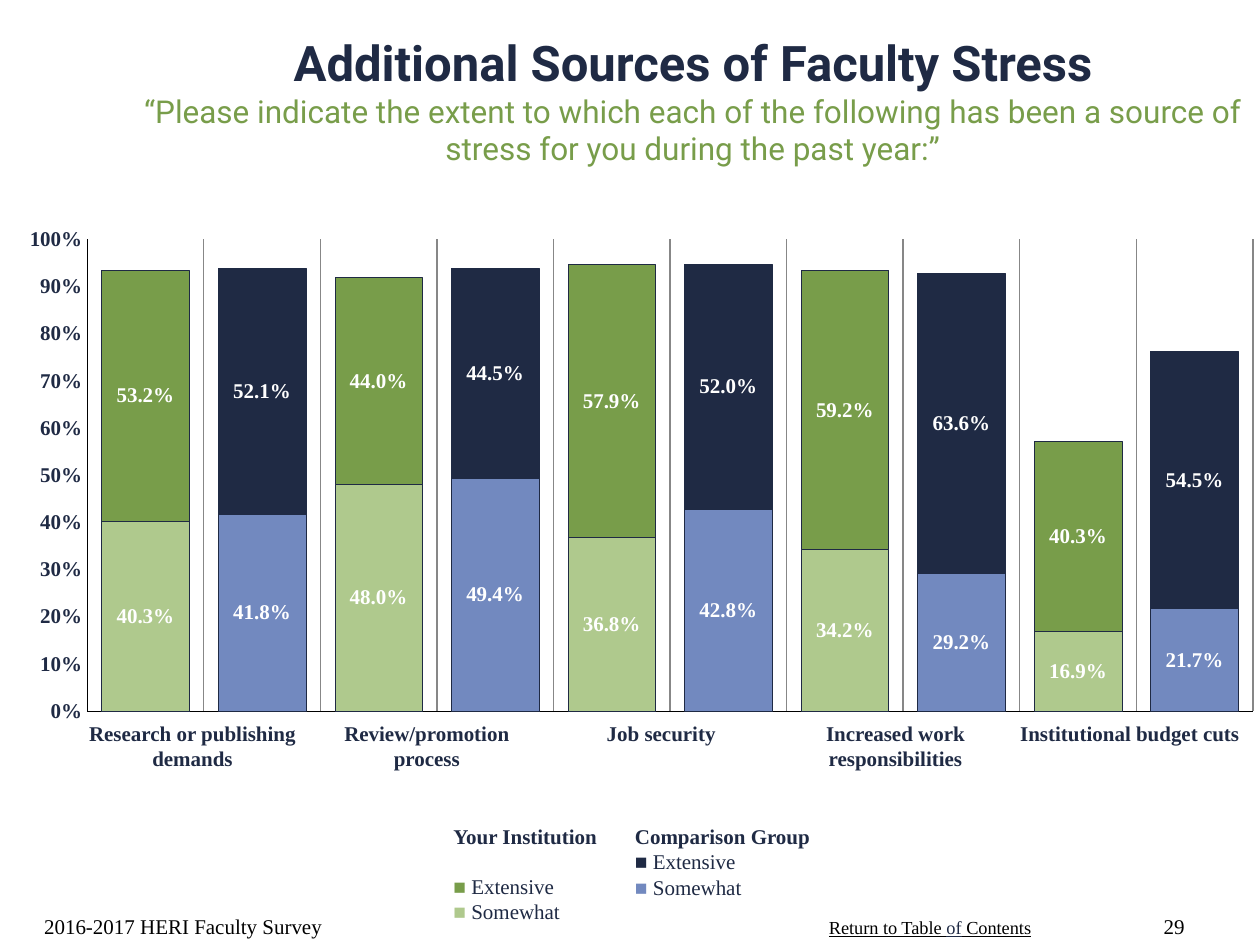
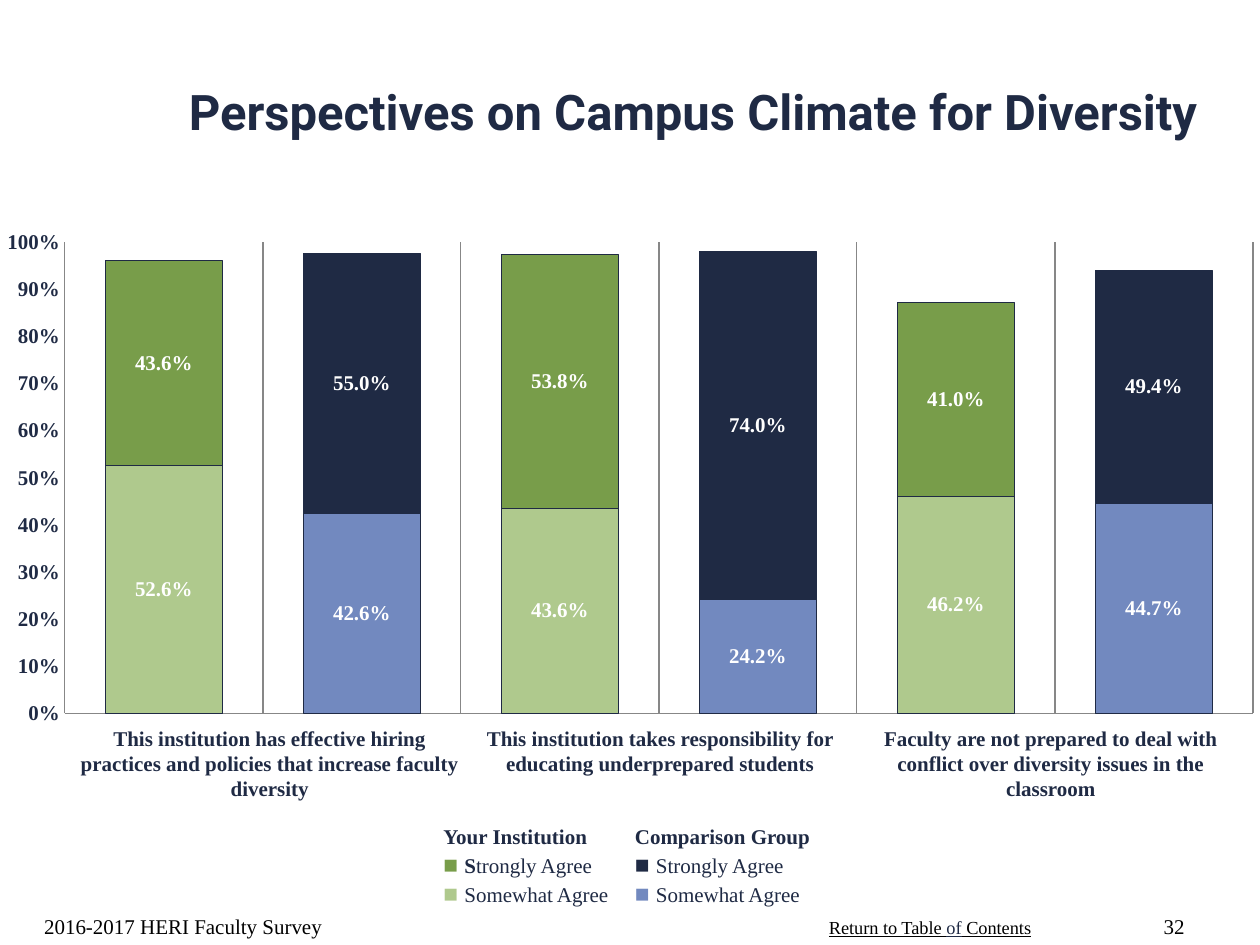
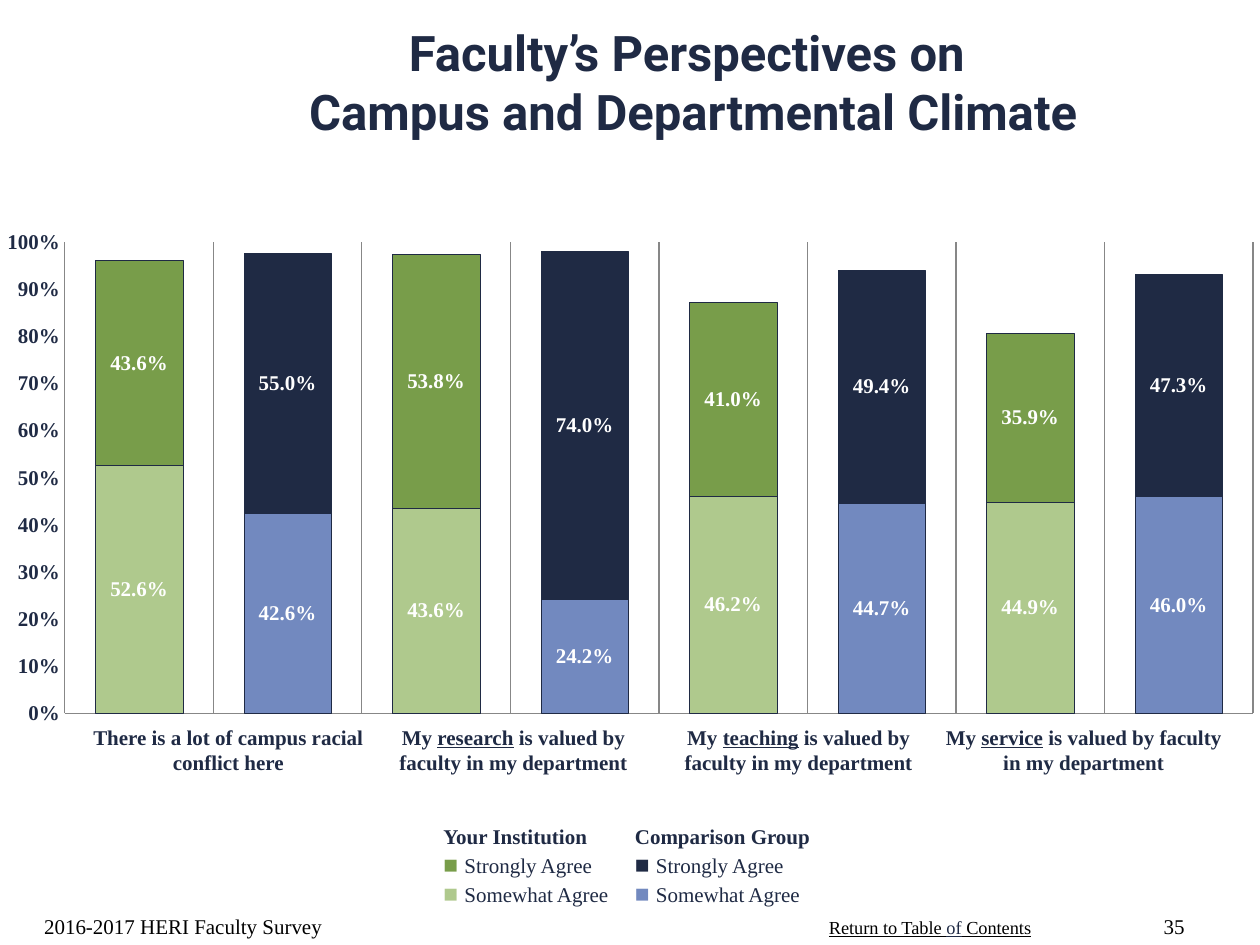
import pptx
import pptx.chart.data
import pptx.dml.color
import pptx.enum.chart
import pptx.enum.text
import pptx.util
from lxml import etree

Cm, Pt = pptx.util.Cm, pptx.util.Pt
ALIGN = pptx.enum.text.PP_ALIGN
ANCHOR = pptx.enum.text.MSO_ANCHOR

NAVY, GREEN, LIGHT_GREEN, BLUE = "1F2A44", "789D4A", "AFC98D", "7289BF"
BLACK, WHITE, GREY = "000000", "FFFFFF", "878787"
SERIF, SANS = "Times New Roman", "Roboto"


def rgb(value):
    return pptx.dml.color.RGBColor.from_string(value)


def add_text(s, box, paras, size=12, color=NAVY, font=SERIF, bold=False,
             align=ALIGN.LEFT, anchor=ANCHOR.TOP, inset=0.25):
    """Each paragraph is a list of runs: a string, or (string, font changes)."""
    tf = s.shapes.add_textbox(*map(Cm, box)).text_frame
    tf.word_wrap = True
    tf.vertical_anchor = anchor
    tf.margin_left = tf.margin_right = Cm(inset)
    for i, runs in enumerate(paras):
        p = tf.add_paragraph() if i else tf.paragraphs[0]
        p.alignment = align
        p.font.name, p.font.size, p.font.bold = font, Pt(size), bold
        p.font.color.rgb = rgb(color)
        for run in runs:
            text, changes = (run, {}) if isinstance(run, str) else run
            for j, line in enumerate(text.split("\n")):
                if j:
                    p.add_line_break()
                r = p.add_run()
                r.text = line
                for key, value in changes.items():
                    if key == "color":
                        r.font.color.rgb = rgb(value)
                    else:
                        setattr(r.font, key, value)
    return tf


UNDERLINE = {"underline": True}
AGREE = dict(left=8.94, marker=14, gap=0, top="Strongly Agree", low="Somewhat Agree")
CLIMATE_SOMEWHAT = [0.526, 0.426, 0.436, 0.242, 0.462, 0.447]
CLIMATE_STRONGLY = [0.436, 0.55, 0.538, 0.74, 0.41, 0.494]
AGREE_CHART = dict(gap=70, plot=(0.045, 0.043, 0.955, 0.936), axis=GREY, axis_width=0.75)

slides = [
    dict(
        number="29",
        title=[["Additional Sources of Faculty Stress"],
               [("“Please indicate the extent to which each of the following has been "
                 "a source of stress for you during the past year:”",
                 {"size": Pt(18), "color": GREEN, "bold": False})]],
        title_height=3.18, title_bottom=0.13,
        somewhat=[0.403, 0.418, 0.48, 0.494, 0.368, 0.428, 0.342, 0.292, 0.169, 0.217],
        extensive=[0.532, 0.521, 0.44, 0.445, 0.579, 0.52, 0.592, 0.636, 0.403, 0.545],
        chart=dict(gap=33, plot=(0.064, 0.037, 0.936, 0.936), axis=BLACK, axis_width=0.19),
        labels=[["Research or publishing demands"], ["Review/promotion process"],
                ["Job security"], ["Increased work responsibilities"],
                ["Institutional budget cuts"]],
        label_box=(1.52, 14.4, 23.62),
        legend=dict(left=9.14, marker=12, gap=14, top="Extensive", low="Somewhat"),
        own_top=["Extensive"],
    ),
    dict(
        number="32",
        title=[["Perspectives on Campus Climate for Diversity"]],
        title_height=3.61, title_bottom=0.13,
        somewhat=CLIMATE_SOMEWHAT, extensive=CLIMATE_STRONGLY, chart=AGREE_CHART,
        labels=[["This institution has effective hiring practices and policies that "
                 "increase faculty diversity"],
                ["This institution takes responsibility for educating underprepared students"],
                ["Faculty are not prepared to deal with conflict over diversity issues "
                 "in the classroom"]],
        label_box=(1.5, 14.5, 23.62),
        legend=AGREE,
        own_top=[("S", {"bold": True}), "trongly Agree"],
    ),
    dict(
        number="35",
        title=[["Faculty’s Perspectives on \nCampus and Departmental Climate"]],
        title_height=3.61, title_bottom=1.32,
        somewhat=CLIMATE_SOMEWHAT + [0.449, 0.46],
        extensive=CLIMATE_STRONGLY + [0.359, 0.473], chart=AGREE_CHART,
        labels=[["There is a lot of campus racial conflict here"]] + [
            ["My ", (work, UNDERLINE), " is valued by faculty in my department"]
            for work in ("research", "teaching", "service")],
        label_box=(1.73, 14.48, 22.99),
        legend=AGREE,
        own_top=["Strongly Agree"],
    ),
]

prs = pptx.Presentation()
prs.slide_width, prs.slide_height = Cm(25.4), Cm(19.05)

for d in slides:
    s = prs.slides.add_slide(prs.slide_layouts[6])

    # Footer
    add_text(s, (16.46, 18.34, 5.2, 0.71),
             [[("Return to Table ", UNDERLINE), ("of", {"underline": True, "color": NAVY}),
               (" Contents", UNDERLINE)]], size=10.5, color=BLACK)
    add_text(s, (22.86, 17.78, 1.27, 1.27), [[d["number"]]], color=BLACK,
             align=ALIGN.RIGHT, anchor=ANCHOR.BOTTOM)
    add_text(s, (0.64, 17.78, 8.05, 1.27), [["2016-2017 HERI Faculty Survey"]],
             color=BLACK, anchor=ANCHOR.BOTTOM)

    # Title
    tf = add_text(s, (2.54, 0.43, 22.86, d["title_height"]), d["title"], size=28,
                  font=SANS, bold=True, align=ALIGN.CENTER, anchor=ANCHOR.MIDDLE)
    tf.margin_bottom = Cm(d["title_bottom"])

    # Stacked columns, alternating institution and comparison group
    style = d["chart"]
    data = pptx.chart.data.CategoryChartData(number_format="0.0%")
    data.categories = [str(i + 1) for i in range(len(d["somewhat"]))]
    data.add_series("Series 1", d["somewhat"])
    data.add_series("Series 2", d["extensive"])
    chart = s.shapes.add_chart(pptx.enum.chart.XL_CHART_TYPE.COLUMN_STACKED,
                               Cm(0.15), Cm(4.45), Cm(25.12), Cm(10.16), data).chart
    chart.has_legend = chart.has_title = False
    chart.font.name, chart.font.size, chart.font.bold = SERIF, Pt(12), True
    chart.font.color.rgb = rgb(NAVY)

    for axis in (chart.category_axis, chart.value_axis):
        axis.major_tick_mark = axis.minor_tick_mark = pptx.enum.chart.XL_TICK_MARK.NONE
        axis.format.line.color.rgb = rgb(style["axis"])
        axis.format.line.width = Pt(style["axis_width"])
    cat, val = chart.category_axis, chart.value_axis
    cat.tick_label_position = pptx.enum.chart.XL_TICK_LABEL_POSITION.NONE
    cat.has_major_gridlines = True
    cat.major_gridlines.format.line.color.rgb = rgb(GREY)
    cat.major_gridlines.format.line.width = Pt(0.75)
    val.has_major_gridlines = False
    val.minimum_scale, val.maximum_scale, val.major_unit = 0, 1, 0.1
    val.tick_labels.number_format = "0%"
    val.tick_labels.number_format_is_linked = False

    plot = chart.plots[0]
    plot.gap_width, plot.overlap, plot.vary_by_categories = style["gap"], 100, False
    for series, own, other in zip(plot.series, (LIGHT_GREEN, GREEN), (BLUE, NAVY)):
        series.format.fill.solid()
        series.format.fill.fore_color.rgb = rgb(own)
        for i in range(len(d["somewhat"])):
            point = series.points[i].format
            point.fill.solid()
            point.fill.fore_color.rgb = rgb(other if i % 2 else own)
            point.line.color.rgb = rgb(NAVY)
            point.line.width = Pt(0.25)
        labels = series.data_labels
        labels.show_value = True
        labels.number_format, labels.number_format_is_linked = "0.0%", False
        labels.font.name, labels.font.size, labels.font.bold = SERIF, Pt(12), True
        labels.font.color.rgb = rgb(WHITE)

    # Fixed plot area
    area = plot._element.getparent()
    ns = area.nsmap["c"]
    for old in area.findall(f"{{{ns}}}layout"):
        area.remove(old)
    layout = etree.Element(f"{{{ns}}}layout")
    manual = etree.SubElement(layout, f"{{{ns}}}manualLayout")
    for tag, value in zip(("layoutTarget", "xMode", "yMode", "x", "y", "w", "h"),
                          ("inner", "edge", "edge", *style["plot"])):
        etree.SubElement(manual, f"{{{ns}}}{tag}").set("val", str(value))
    area.insert(0, layout)

    # Question under each pair of columns
    left, top, total = d["label_box"]
    width = total / len(d["labels"])
    for i, label in enumerate(d["labels"]):
        add_text(s, (left + i * width, top, width, 1.8), [label], bold=True,
                 align=ALIGN.CENTER, inset=0)

    # Legend
    key = d["legend"]
    for x, heading, top_color, low_color, top_runs, gap in (
            (key["left"], "Your Institution", GREEN, LIGHT_GREEN, d["own_top"], key["gap"]),
            (12.8, "Comparison Group", NAVY, BLUE, [key["top"]], 0)):
        marks = [("■ ", {"size": Pt(key["marker"]), "color": c})
                 for c in (top_color, low_color)]
        tf = add_text(s, (x, 16.48, 3.8, 2.3),
                      [[(heading, {"bold": True})], [marks[0], *top_runs],
                       [marks[1], key["low"]]], inset=0)
        tf.paragraphs[1].space_before = Pt(gap)

prs.save("out.pptx")
